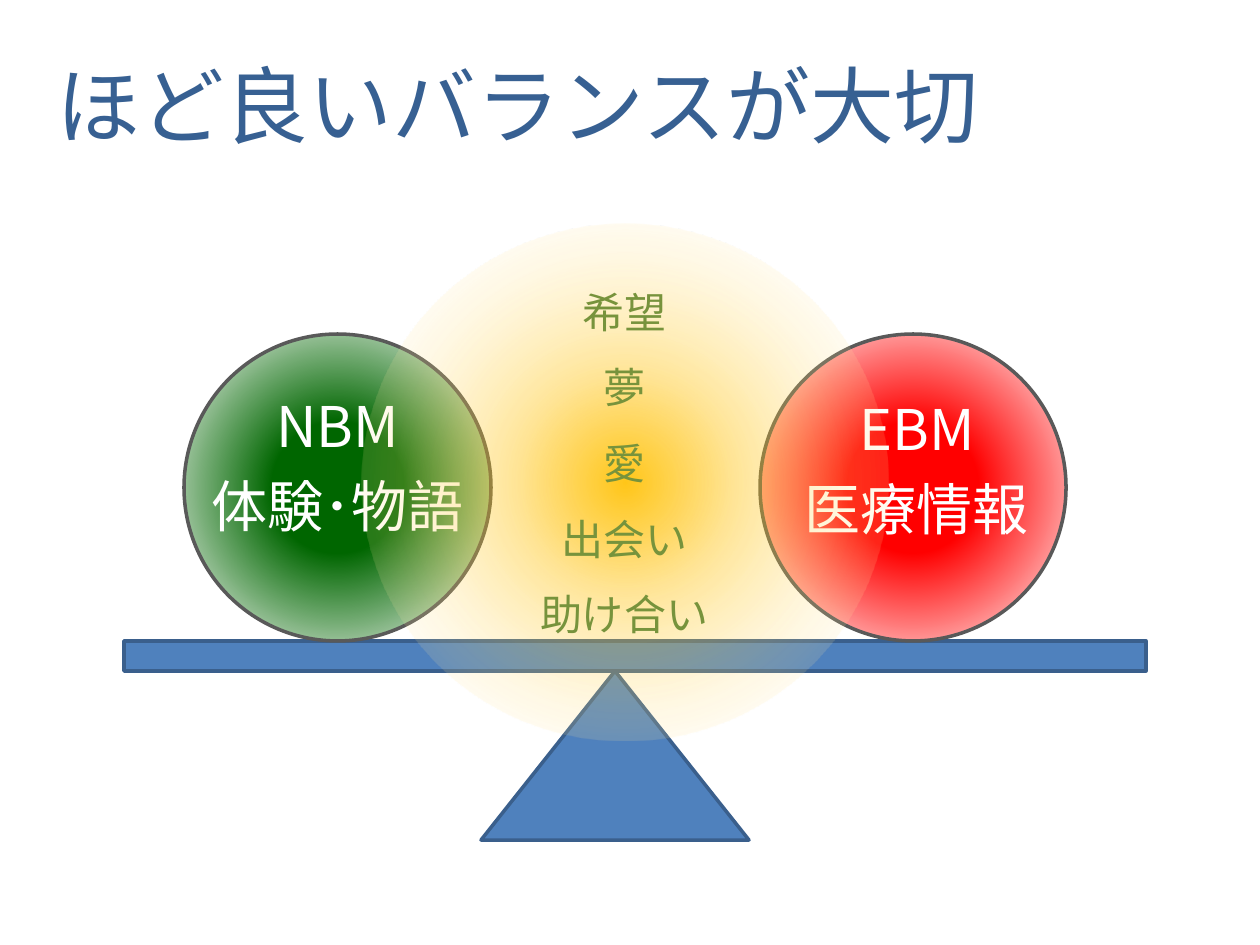
from lxml import etree
from pptx import Presentation
from pptx.dml.color import RGBColor
from pptx.enum.shapes import MSO_SHAPE
from pptx.enum.text import MSO_ANCHOR, PP_ALIGN
from pptx.oxml import parse_xml
from pptx.oxml.ns import nsdecls, qn
from pptx.util import Emu, Pt

TRIANGLE, BAR = MSO_SHAPE.ISOSCELES_TRIANGLE, MSO_SHAPE.RECTANGLE
OVAL = MSO_SHAPE.OVAL
LEFT, CENTER = PP_ALIGN.LEFT, PP_ALIGN.CENTER
TOP, MIDDLE = MSO_ANCHOR.TOP, MSO_ANCHOR.MIDDLE

FONT = "Noto Sans CJK JP"
SCALE = 914400 / 126
TITLE = "ほど良いバランスが大切"
VALUES = ["希望", "夢", "愛", "出会い", "助け合い"]
SEESAW = [(TRIANGLE, (481, 671, 268, 169)), (BAR, (124, 641, 1022, 30))]
BALLS = [
    {"lines": ["NBM", "体験･物語"], "color": "006600", "ball": (184, 334, 307, 307),
     "label": (184, 355, 307, 214), "inset": 15},
    {"lines": ["EBM", "医療情報"], "color": "FF0000", "ball": (760, 334, 306, 307),
     "label": (748, 354, 338, 236), "inset": 0},
]
HALO = (362, 224, 526, 516)
HALO_STOPS = [(0, "FFC000", 90), (30, "FFC000", 40), (95, "FFFFFF", 0)]


def px(length):
    return Emu(round(length * SCALE))


def rgb(color):
    return RGBColor.from_string(color)


def add_figure(parent, kind, box, line=None):
    figure = parent.add_shape(kind, *map(px, box))
    figure.shadow.inherit = False
    if line:
        figure.line.color.rgb = rgb(line)
        figure.line.width = Pt(2)
    else:
        figure.line.fill.background()
    figure.fill.solid()
    return figure


def fill_radial(figure, stops):
    stop_xml = "".join(
        f'<a:gs pos="{place * 1000}"><a:srgbClr val="{color}">'
        f'<a:alpha val="{opacity * 1000}"/></a:srgbClr></a:gs>'
        for place, color, opacity in stops
    )
    gradient = parse_xml(
        f'<a:gradFill {nsdecls("a")} rotWithShape="1"><a:gsLst>{stop_xml}</a:gsLst>'
        '<a:path path="circle"><a:fillToRect l="50000" t="50000" r="50000" b="50000"/>'
        "</a:path></a:gradFill>"
    )
    properties = figure.element.spPr
    properties.replace(properties.find(qn("a:solidFill")), gradient)


def write(frame, lines, size, color, align=CENTER, anchor=TOP, spacing=1.0, after=0):
    frame.word_wrap = True
    frame.vertical_anchor = anchor
    frame.text = "\n".join(lines)
    for paragraph in frame.paragraphs:
        paragraph.alignment = align
        paragraph.line_spacing = spacing
        paragraph.space_after = Pt(after)
        font = paragraph.font
        font.size, font.name = Pt(size), FONT
        font.color.rgb = rgb(color)
        defaults = paragraph._p.pPr.find(qn("a:defRPr"))
        etree.SubElement(defaults, qn("a:ea")).set("typeface", FONT)


def add_ball(shapes, item):
    group = shapes.add_group_shape().shapes
    color = item["color"]
    ball = add_figure(group, OVAL, item["ball"], "595959")
    fill_radial(ball, [(0, color, 100), (30, color, 100), (100, "FFFFFF", 100)])
    frame = group.add_textbox(*map(px, item["label"])).text_frame
    frame.margin_left = frame.margin_right = frame.margin_bottom = 0
    frame.margin_top = px(item["inset"])
    write(frame, item["lines"], 32, "FFFFFF", anchor=MIDDLE, spacing=0.9, after=11)


def main():
    """Build the slide of two balls balanced on a seesaw."""
    deck = Presentation()
    deck.slide_width, deck.slide_height = px(1260), px(945)
    shapes = deck.slides.add_slide(deck.slide_layouts[5]).shapes

    title = shapes.title
    title.left, title.top, title.width, title.height = map(px, (44, 45, 1181, 118))
    write(title.text_frame, [TITLE], 48, "376092", align=LEFT, anchor=MIDDLE)

    for kind, box in SEESAW:
        add_figure(shapes, kind, box, "3A5F8C").fill.fore_color.rgb = rgb("4F81BD")
    for item in BALLS:
        add_ball(shapes, item)
    fill_radial(add_figure(shapes, OVAL, HALO), HALO_STOPS)

    values = shapes.add_textbox(*map(px, (520, 255, 208, 394)))
    write(values.text_frame, VALUES, 24, "77933C", spacing=1.5)
    deck.save("out.pptx")


if __name__ == "__main__":
    main()
